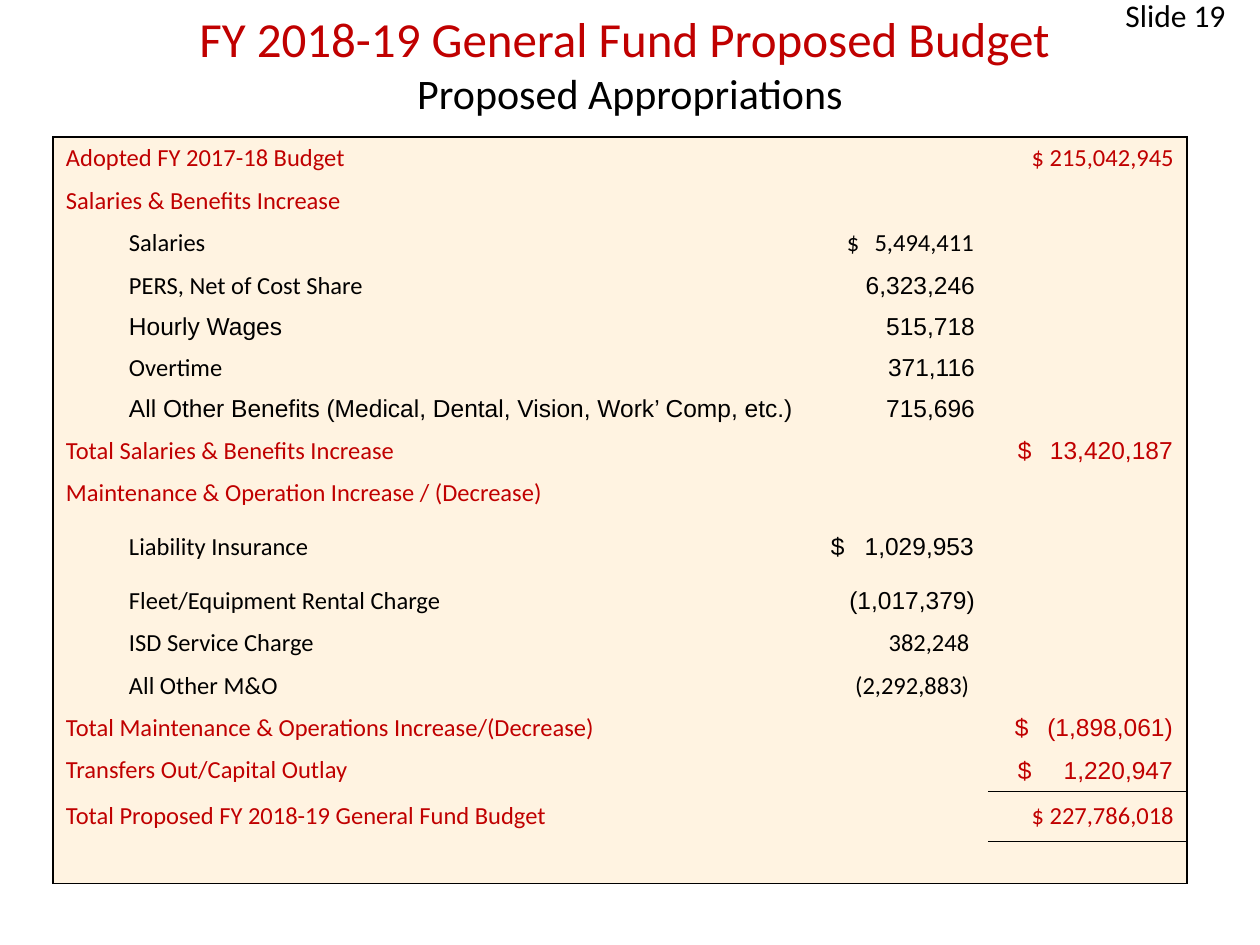
from dataclasses import dataclass

from lxml import etree
from pptx import Presentation, util as u
from pptx.dml.color import RGBColor
from pptx.enum import text
from pptx.oxml import ns


@dataclass(frozen=True)
class Theme:
    """Colours, fonts and type sizes of the slide."""
    red: str = "C00000"
    black: str = "000000"
    cream: str = "FFF3E1"
    sans: str = "Calibri"
    alt: str = "Arial"
    head: int = 28
    sub: int = 24
    tag: int = 18
    cell: int = 14


T = Theme()
C, A = T.sans, T.alt
PAD, INDENT = 13, 63
COLS = (756, 179, 199)
RULED = (14, 15)
ROWS = [
    (43, "Adopted FY 2017-18 Budget", C, 0, "$ 215,042,945", C, 0),
    (42, "Salaries & Benefits Increase", C, 0, "", C, 0),
    (43, "Salaries", C, 1, "$\t5,494,411", C, 128),
    (42, "PERS, Net of Cost Share", C, 1, "6,323,246", A, 0),
    (41, "Hourly Wages", A, 1, "515,718", A, 0),
    (41, "Overtime", C, 1, "371,116", A, 0),
    (41, "All Other Benefits (Medical, Dental, Vision, Work’ Comp, etc.)", A, 1,
     "715,696", A, 0),
    (42, "Total Salaries & Benefits Increase", C, 0, "$\t13,420,187", A, 156),
    (42, "Maintenance & Operation Increase / (Decrease)", C, 0, "", C, 0),
    (66, "Liability Insurance", C, 1, "$\t1,029,953", A, 144),
    (42, "Fleet/Equipment Rental Charge", C, 1, "(1,017,379)", A, 0),
    (43, "ISD Service Charge", C, 1, "382,248 ", C, 0),
    (42, "All Other M&O", C, 1, "(2,292,883) ", C, 0),
    (43, "Total Maintenance & Operations Increase/(Decrease)", C, 0,
     "$\t(1,898,061)", A, 159),
    (42, "Transfers Out/Capital Outlay", C, 0, "$\t1,220,947", A, 156),
    (50, "Total Proposed FY 2018-19 General Fund Budget", C, 0,
     "$ 227,786,018", C, 0),
    (42, "", C, 0, "", C, 0),
]


def px(n):
    """Turn whole px into EMU."""
    return u.Emu(round(n * 914400 / 126))


def put(item, **vals):
    """Set attributes from format values."""
    for key, val in vals.items():
        setattr(item, key, val)


def place(shape, box):
    """Move a shape into a px box."""
    put(shape, **dict(zip(("left", "top", "width", "height"), map(px, box))))


def write(para, words, size, color, face=C):
    """Add one styled run to a paragraph."""
    run = para.add_run()
    put(run, text=words)
    put(run.font, size=u.Pt(size), name=face)
    run.font.color.rgb = RGBColor.from_string(color)


def node(parent, tag, **attrs):
    """Append a drawing element."""
    return etree.SubElement(parent, ns.qn(tag), attrs)


def edge(cell, sides):
    """Draw the named sides of a cell and clear the others."""
    props = cell._tc.get_or_add_tcPr()
    for side in "LRTB":
        line = node(props, "a:ln" + side, w=str(u.Pt(1)))
        if side in sides:
            node(node(line, "a:solidFill"), "a:srgbClr", val=T.black)
        else:
            node(line, "a:noFill")


def sides(row, col):
    """Name the ruled sides of a cell."""
    last = len(COLS) - 1
    tests = {
        "L": col == 0,
        "R": col == last,
        "T": row == 0 or (col == last and row - 1 in RULED),
        "B": row == len(ROWS) - 1 or (col == last and row in RULED),
    }
    return [side for side, drawn in tests.items() if drawn]


def label(cell, words, face, sub):
    """Write a row label, indented when it is a sub-item."""
    para = cell.text_frame.paragraphs[0]
    if sub:
        para.level = 1
        put_pr = para._p.get_or_add_pPr()
        put_pr.set("marL", str(px(INDENT)))
        put_pr.set("indent", "0")
    write(para, words, T.cell, T.black if sub else T.red, face)


def amount(cell, words, face, sub, span, wide):
    """Write an amount, with a right tab when its sign stands apart."""
    para = cell.text_frame.paragraphs[0]
    if span:
        cell.margin_left = px(wide - PAD - span)
        tabs = node(para._p.get_or_add_pPr(), "a:tabLst")
        node(tabs, "a:tab", pos=str(px(span - 1)), algn="r")
    else:
        para.alignment = text.PP_ALIGN.RIGHT
    write(para, words, T.cell, T.black if sub else T.red, face)


def budget(slide, box):
    """Build the budget table."""
    frame = slide.shapes.add_table(len(ROWS), len(COLS), *map(px, box))
    table = frame.table
    put(table, first_row=False, horz_banding=False)
    for col, wide in zip(table.columns, COLS):
        col.width = px(wide)
    for i, (high, words, face, sub, value, font, span) in enumerate(ROWS):
        table.rows[i].height = px(high)
        for j in range(len(COLS)):
            cell = table.cell(i, j)
            put(cell, margin_left=px(PAD), margin_right=px(PAD),
                margin_top=px(4), margin_bottom=px(4),
                vertical_anchor=text.MSO_ANCHOR.MIDDLE)
            edge(cell, sides(i, j))
            cell.fill.solid()
            cell.fill.fore_color.rgb = RGBColor.from_string(T.cream)
            spot = 1 if sub else 2
            if j == 0 and words:
                label(cell, words, face, sub)
            elif j == spot and value:
                amount(cell, value, font, sub, span, COLS[j])
            else:
                para = cell.text_frame.paragraphs[0]
                node(para._p, "a:endParaRPr", sz=str(T.cell * 100))
    for i in (-2, -1):
        row = len(ROWS) + i
        table.cell(row, 0).merge(table.cell(row, 1))


def heading(slide, box):
    """Fill the title placeholder with its two lines."""
    title = slide.shapes.title
    place(title, box)
    frame = title.text_frame
    put(frame, auto_size=text.MSO_AUTO_SIZE.NONE, word_wrap=True,
        vertical_anchor=text.MSO_ANCHOR.MIDDLE)
    lines = (("FY 2018-19 General Fund Proposed Budget ", T.head, T.red),
             ("Proposed Appropriations", T.sub, T.black))
    for i, (words, size, color) in enumerate(lines):
        para = frame.add_paragraph() if i else frame.paragraphs[0]
        put(para, alignment=text.PP_ALIGN.CENTER, space_before=u.Pt(0))
        write(para, words, size, color)


def tag(slide, box):
    """Place the slide tag in the corner."""
    frame = slide.shapes.add_textbox(*map(px, box)).text_frame
    frame.word_wrap = True
    write(frame.paragraphs[0], "Slide 19", T.tag, T.black)


def main():
    """Build and save the slide."""
    deck = Presentation()
    put(deck, slide_width=px(1260), slide_height=px(945))
    slide = deck.slides.add_slide(deck.slide_layouts[5])
    budget(slide, (53, 137, sum(COLS), sum(row[0] for row in ROWS)))
    heading(slide, (42, 21, 1176, 84))
    tag(slide, (1113, -10, 147, 63))
    deck.save("out.pptx")


if __name__ == "__main__":
    main()
